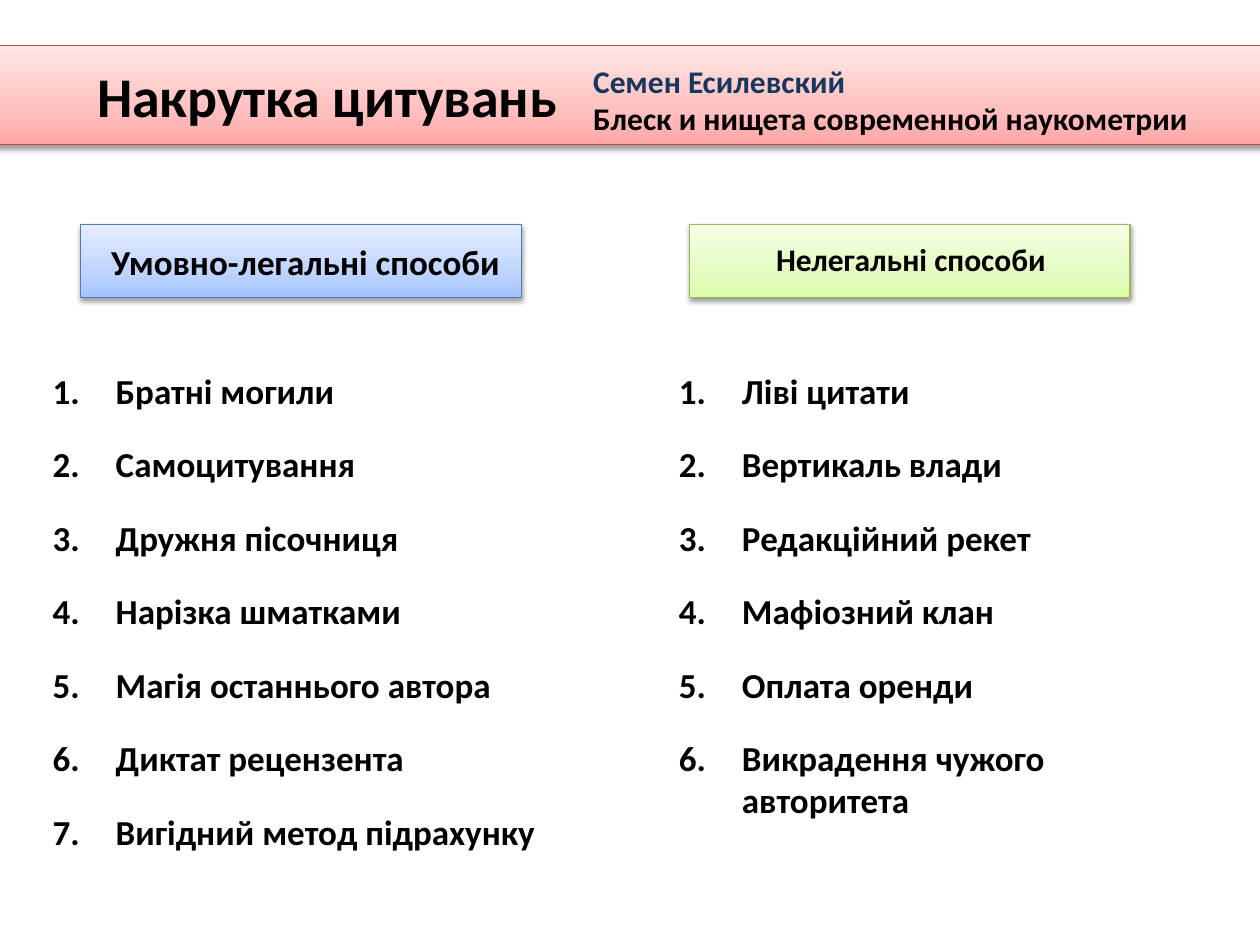
"""Build a slide that lists semi-legal and illegal ways to inflate citations."""
from lxml.etree import SubElement
from pptx import Presentation
from pptx.dml.color import RGBColor
from pptx.enum.shapes import MSO_SHAPE
from pptx.enum.text import MSO_ANCHOR, MSO_AUTO_SIZE, PP_ALIGN
from pptx.oxml.ns import qn
from pptx.util import Inches, Pt

COLORS = {
    "black": "000000",
    "navy": "17375E",
    "red": ("FFA6A5", "FFC0BF", "FFE7E7", "BF4C48"),
    "green": ("DAFDA7", "E4FCC2", "F5FFE7", "98B955"),
    "blue": ("A4C4FF", "BFD4FF", "E6EEFF", "4B7EBC"),
}


def write(box, lines, size=20, colors=("black",), align=PP_ALIGN.LEFT, wrap=False, numbered=False):
    frame = box.text_frame
    frame.word_wrap = wrap
    frame.auto_size = MSO_AUTO_SIZE.SHAPE_TO_FIT_TEXT
    frame.vertical_anchor = MSO_ANCHOR.TOP
    for index, line in enumerate(lines):
        para = frame.add_paragraph() if index else frame.paragraphs[0]
        para.alignment = align
        span = para.add_run()
        span.text = line
        span.font.name = "Calibri"
        span.font.size = Pt(size)
        span.font.bold = True
        span.font.color.rgb = RGBColor.from_string(COLORS[colors[index % len(colors)]])
        if numbered:
            para.space_after = Pt(18)
            properties = para._p.get_or_add_pPr()
            properties.set("marL", str(Inches(0.5)))
            properties.set("indent", str(Inches(-0.5)))
            SubElement(properties, qn("a:buFont"), typeface="+mj-lt")
            SubElement(properties, qn("a:buAutoNum"), type="arabicPeriod")


def add_panel(page, left, top, width, height, color):
    panel = page.shapes.add_shape(
        MSO_SHAPE.RECTANGLE, Inches(left), Inches(top), Inches(width), Inches(height))
    *shades, edge = COLORS[color]
    panel.fill.gradient()
    panel.fill.gradient_angle = 90
    stops = panel._element.spPr.find(qn("a:gradFill")).find(qn("a:gsLst"))
    for stop in list(stops):
        stops.remove(stop)
    for position, shade in zip((0, 35, 100), shades):
        stop = SubElement(stops, qn("a:gs"), pos=str(position * 1000))
        SubElement(stop, qn("a:srgbClr"), val=shade)
    panel.line.color.rgb = RGBColor.from_string(edge)
    panel.line.width = Pt(0.75)
    panel.shadow.inherit = False
    effects = panel._element.spPr.find(qn("a:effectLst"))
    shadow = SubElement(effects, qn("a:outerShdw"), blurRad=str(Pt(3.1)), dist=str(Pt(1.6)),
                        dir="5400000", rotWithShape="0")
    tint = SubElement(shadow, qn("a:srgbClr"), val=COLORS["black"])
    SubElement(tint, qn("a:alpha"), val="38000")
    return panel


deck = Presentation()
deck.slide_width, deck.slide_height = Inches(10), Inches(7.5)
page = deck.slides.add_slide(deck.slide_layouts[5])

band = add_panel(page, -0.35, 0.36, 10.63, 0.79, "red")
title = page.shapes.title
title._element.addprevious(band._element)
title.left, title.top = Inches(0.67), Inches(0.44)
title.width, title.height = Inches(3.89), Inches(0.64)
write(title, ["Накрутка цитувань"], size=32)

source = page.shapes.add_textbox(Inches(4.61), Inches(0.44), Inches(4.96), Inches(0.71))
write(source, ["Семен Есилевский", "Блеск и нищета современной наукометрии"],
      size=18, colors=("navy", "black"))

headings = [
    ("Умовно-легальні способи", 0.64, "blue", 20, 0.77, 3.31, 0.44),
    ("Нелегальні способи", 5.47, "green", 18, 6.05, 2.36, 0.4),
]
for text, panel_left, color, size, left, width, height in headings:
    add_panel(page, panel_left, 1.78, 3.5, 0.58, color)
    heading = page.shapes.add_textbox(Inches(left), Inches(1.86), Inches(width), Inches(height))
    write(heading, [text], size=size, align=PP_ALIGN.CENTER)

methods = [
    (0.32, 3.97, PP_ALIGN.JUSTIFY, [
        "Братні могили", "Самоцитування", "Дружня пісочниця", "Нарізка шматками",
        "Магія останнього автора", "Диктат рецензента", "Вигідний метод підрахунку"]),
    (5.29, 3.72, PP_ALIGN.LEFT, [
        "Ліві цитати", "Вертикаль влади", "Редакційний рекет", "Мафіозний клан",
        "Оплата оренди", "Викрадення чужого авторитета"]),
]
for left, height, align, items in methods:
    column = page.shapes.add_textbox(Inches(left), Inches(2.88), Inches(4.25), Inches(height))
    write(column, items, align=align, wrap=True, numbered=True)

deck.save("out.pptx")
